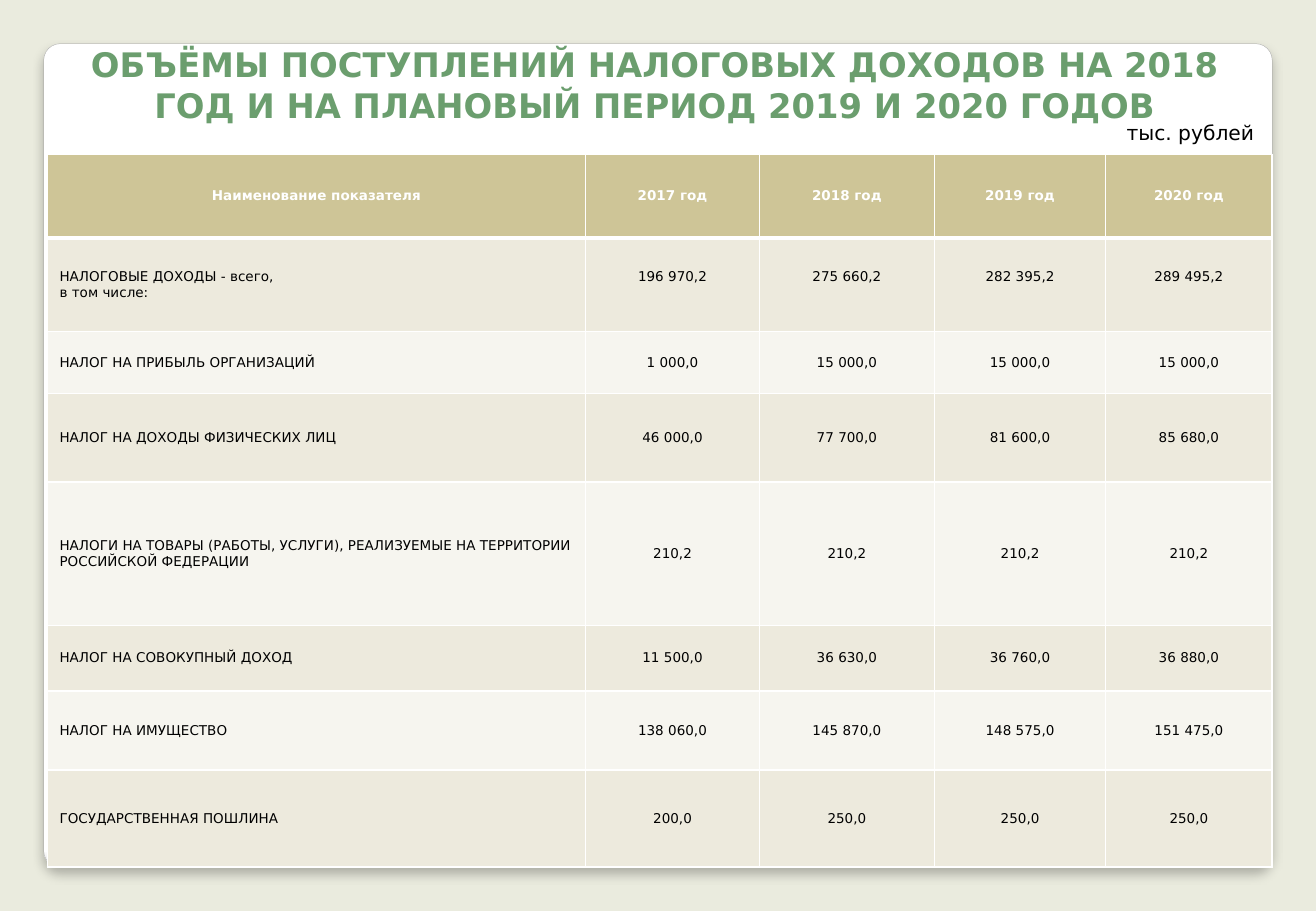
from lxml.etree import fromstring
from pptx import Presentation
from pptx.dml.color import RGBColor
from pptx.enum.shapes import MSO_SHAPE
from pptx.enum.text import MSO_ANCHOR, MSO_AUTO_SIZE, PP_ALIGN
from pptx.util import Inches, Pt

COLORS = {
    "background": "EAEBDE", "white": "FFFFFF", "panel_edge": "DADADA",
    "panel_line": "A4A4A4", "title": "6B9E6E", "text": "000000",
    "header": "CEC597", "odd_row": "EDEADD", "even_row": "F6F5EF",
}
FONT = "DejaVu Sans"
DRAWING_NS = "http://schemas.openxmlformats.org/drawingml/2006/main"


def rgb(name):
    return RGBColor.from_string(COLORS[name])


def write(frame, text, size=8, color="text", bold=False, align=PP_ALIGN.LEFT):
    frame.text = text
    for paragraph in frame.paragraphs:
        paragraph.alignment = align
        font = paragraph.runs[0].font
        font.name, font.size, font.bold = FONT, Pt(size), bold
        font.color.rgb = rgb(color)


prs = Presentation()
prs.slide_width, prs.slide_height = Inches(10.83), Inches(7.5)
slide = prs.slides.add_slide(prs.slide_layouts[5])
slide.background.fill.solid()
slide.background.fill.fore_color.rgb = rgb("background")

# White rounded panel with a soft shadow
panel = slide.shapes.add_shape(
    MSO_SHAPE.ROUNDED_RECTANGLE, Inches(0.36), Inches(0.36), Inches(10.11), Inches(6.78))
panel.adjustments[0] = 0.02
panel.fill.gradient()
panel.fill.gradient_angle = 270
for stop, position, color in zip(
        panel.fill.gradient_stops, (0.98, 1), ("white", "panel_edge")):
    stop.position = position
    stop.color.rgb = rgb(color)
panel.line.color.rgb = rgb("panel_line")
panel.line.width = Pt(0.16)
panel.element.spPr.append(fromstring(
    f'<a:effectLst xmlns:a="{DRAWING_NS}">'
    f'<a:outerShdw blurRad="{Pt(6)}" dist="{Pt(4)}" dir="5400000" algn="t" rotWithShape="0">'
    f'<a:srgbClr val="{COLORS["text"]}"><a:alpha val="25000"/></a:srgbClr>'
    '</a:outerShdw></a:effectLst>'))

# Title, in front of the panel
title = slide.shapes.title
title.element.addprevious(panel.element)
title.left, title.top = Inches(0.36), Inches(0.31)
title.width, title.height = Inches(10.06), Inches(0.77)
title.text_frame.auto_size = MSO_AUTO_SIZE.NONE
title.text_frame.vertical_anchor = MSO_ANCHOR.MIDDLE
write(title.text_frame,
      "ОБЪЁМЫ ПОСТУПЛЕНИЙ НАЛОГОВЫХ ДОХОДОВ НА 2018 ГОД И НА ПЛАНОВЫЙ ПЕРИОД 2019 И 2020 ГОДОВ",
      size=20, color="title", bold=True, align=PP_ALIGN.CENTER)

# Tax revenue table
revenues = [
    ("Наименование показателя", "2017 год", "2018 год", "2019 год", "2020 год"),
    ("НАЛОГОВЫЕ ДОХОДЫ - всего,\nв том числе:",
     "196 970,2", "275 660,2", "282 395,2", "289 495,2"),
    ("НАЛОГ НА ПРИБЫЛЬ ОРГАНИЗАЦИЙ", "1 000,0", "15 000,0", "15 000,0", "15 000,0"),
    ("НАЛОГ НА ДОХОДЫ ФИЗИЧЕСКИХ ЛИЦ", "46 000,0", "77 700,0", "81 600,0", "85 680,0"),
    ("НАЛОГИ НА ТОВАРЫ (РАБОТЫ, УСЛУГИ), РЕАЛИЗУЕМЫЕ НА ТЕРРИТОРИИ РОССИЙСКОЙ ФЕДЕРАЦИИ",
     "210,2", "210,2", "210,2", "210,2"),
    ("НАЛОГ НА СОВОКУПНЫЙ ДОХОД", "11 500,0", "36 630,0", "36 760,0", "36 880,0"),
    ("НАЛОГ НА ИМУЩЕСТВО", "138 060,0", "145 870,0", "148 575,0", "151 475,0"),
    ("ГОСУДАРСТВЕННАЯ ПОШЛИНА", "200,0", "250,0", "250,0", "250,0"),
]
column_widths = (4.43, 1.43, 1.44, 1.41, 1.37)
row_heights = (0.69, 0.77, 0.51, 0.73, 1.18, 0.54, 0.65, 0.8)
table = slide.shapes.add_table(
    len(revenues), len(column_widths), Inches(0.39), Inches(1.27),
    Inches(sum(column_widths)), Inches(sum(row_heights))).table
for column, width in zip(table.columns, column_widths):
    column.width = Inches(width)
for row, height in zip(table.rows, row_heights):
    row.height = Inches(height)

for r, values in enumerate(revenues):
    is_header = r == 0
    row_color = "header" if is_header else "odd_row" if r % 2 else "even_row"
    for c, value in enumerate(values):
        cell = table.cell(r, c)
        cell.vertical_anchor = MSO_ANCHOR.MIDDLE
        cell.fill.solid()
        cell.fill.fore_color.rgb = rgb(row_color)
        write(cell.text_frame, value, bold=is_header,
              color="white" if is_header else "text",
              align=PP_ALIGN.CENTER if is_header or c else PP_ALIGN.LEFT)
        # Totals line up with the first line of their label
        if r == 1 and c:
            cell.margin_bottom = Inches(0.18)
        # White borders, thicker under the header
        for i, side in enumerate("LRTB"):
            thick = (r, side) in ((0, "B"), (1, "T"))
            cell._tc.tcPr.insert(i, fromstring(
                f'<a:ln{side} xmlns:a="{DRAWING_NS}" w="{Pt(3 if thick else 1)}">'
                f'<a:solidFill><a:srgbClr val="{COLORS["white"]}"/></a:solidFill>'
                f'</a:ln{side}>'))

# Unit of measure
unit = slide.shapes.add_textbox(Inches(9.17), Inches(0.94), Inches(1.25), Inches(0.3))
unit.text_frame.word_wrap = False
write(unit.text_frame, "тыс. рублей", size=12, align=PP_ALIGN.RIGHT)

prs.save("out.pptx")
